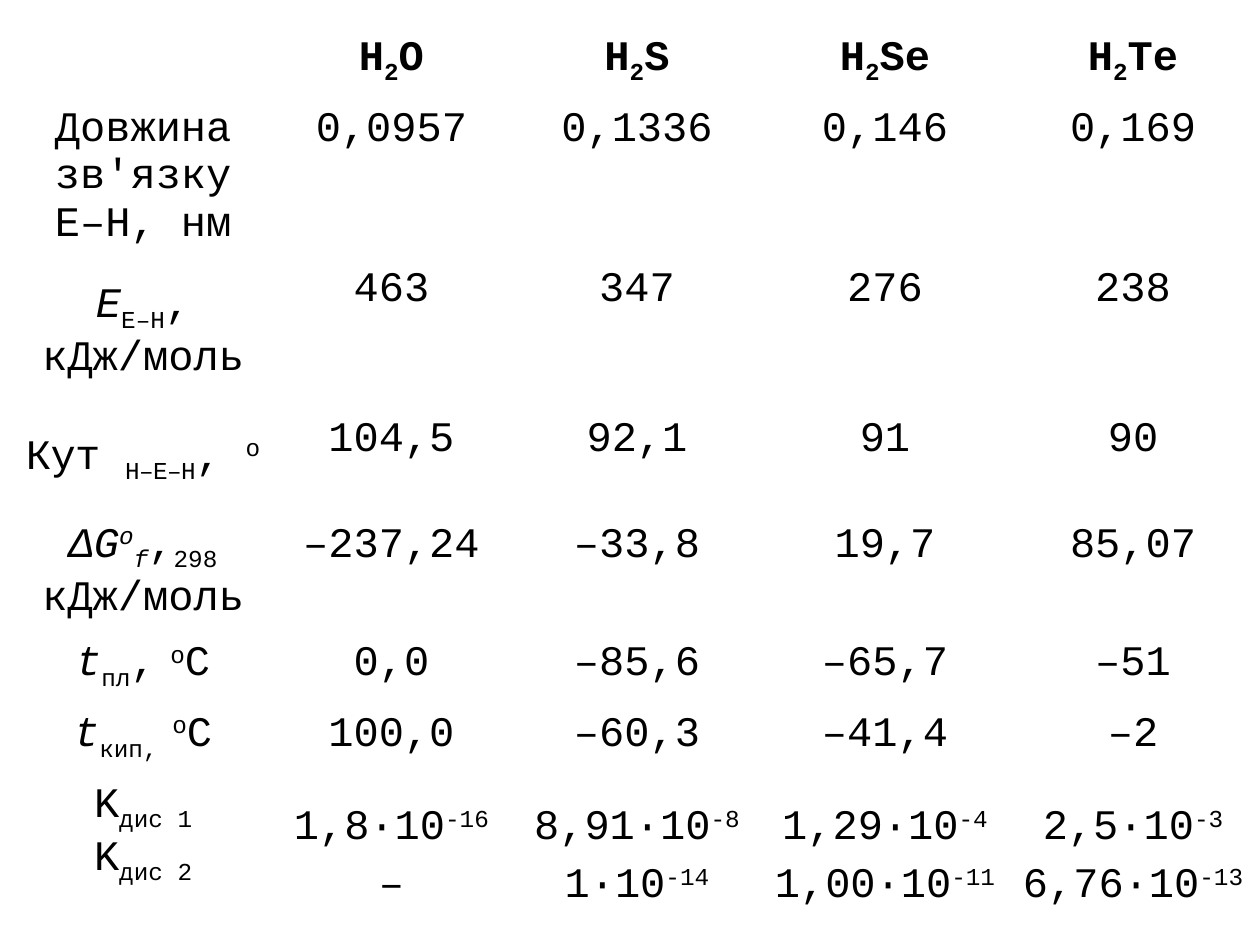
from typing import NamedTuple

from lxml import etree
from pptx import Presentation
from pptx.dml.color import RGBColor
from pptx.enum.text import MSO_ANCHOR, PP_ALIGN
from pptx.oxml.ns import qn
from pptx.util import Cm, Pt

TOP, MIDDLE = MSO_ANCHOR.TOP, MSO_ANCHOR.MIDDLE
CENTER = PP_ALIGN.CENTER
COLORS = {"text": "000000", "border": "FFFFFF"}
FONT_NAME, FONT_SIZE = "Courier New", Pt(24)
SUBSCRIPT, SUPERSCRIPT = -25, 30
COLUMN_WIDTHS = [5.11, 4.9, 5.0, 5.0, 5.0]


class Piece(NamedTuple):
    text: str
    baseline: int = 0
    italic: bool = False
    spacing: int = 0


class TableRow(NamedTuple):
    height: float
    label: list  # paragraphs, each a list of pieces
    values: list  # one list of paragraphs per compound
    label_anchor: MSO_ANCHOR = MIDDLE
    value_anchor: MSO_ANCHOR = TOP
    bold: bool = False


def sub(text: str, italic: bool = False, spacing: int = 0) -> Piece:
    return Piece(text, SUBSCRIPT, italic, spacing)


def sup(text: str, italic: bool = False, spacing: int = 0) -> Piece:
    return Piece(text, SUPERSCRIPT, italic, spacing)


def plain(*texts: str) -> list:
    return [[[Piece(text)]] for text in texts]


def hydride(element: str) -> list:
    return [[Piece("H"), sub("2"), Piece(element)]]


def power(factor: str, exponent: str) -> list:
    return [Piece(f"{factor}·10"), sup(exponent)]


ROWS = [
    TableRow(1.27, [], [hydride(name) for name in ("O", "S", "Se", "Te")], bold=True),
    TableRow(2.13, [[Piece("Довжина зв'язку Е‒Н, нм")]],
             plain("0,0957", "0,1336", "0,146", "0,169")),
    TableRow(3.02, [[Piece("E", italic=True), sub("Е‒Н"), Piece(", кДж/моль")]],
             plain("463", "347", "276", "238")),
    TableRow(2.13, [[Piece("Кут ", spacing=-30), sub("Н‒Е‒Н", spacing=-30),
                     Piece(", ", spacing=-30), sup("о", spacing=-30)]],
             plain("104,5", "92,1", "91", "90")),
    TableRow(2.13, [[Piece("ΔG", italic=True), sup("о", True), sub("f", True),
                     Piece(","), sub("298"), Piece(" кДж/моль")]],
             plain("‒237,24", "‒33,8", "19,7", "85,07")),
    TableRow(1.27, [[Piece("t", italic=True), sub("пл"), Piece(","), sup(" о"), Piece("С")]],
             plain("0,0", "‒85,6", "‒65,7", "‒51")),
    TableRow(1.27, [[Piece("t", italic=True), sub("кип, "), sup("о"), Piece("С")]],
             plain("100,0", "‒60,3", "‒41,4", "‒2")),
    TableRow(3.4, [[Piece("K"), sub("дис 1")], [Piece("K"), sub("дис 2")]],
             [[power("1,8", "-16"), [Piece("‒")]],
              [power("8,91", "-8"), power("1", "-14")],
              [power("1,29", "-4"), power("1,00", "-11")],
              [power("2,5", "-3"), power("6,76", "-13")]],
             label_anchor=TOP, value_anchor=MIDDLE),
]


def add_piece(paragraph, piece: Piece, bold: bool) -> None:
    run = paragraph.add_run()
    run.text = piece.text
    font = run.font
    font.name, font.size = FONT_NAME, FONT_SIZE
    font.bold, font.italic = bold, piece.italic
    font.color.rgb = RGBColor.from_string(COLORS["text"])
    # Baseline shift and letter spacing exist only as XML attributes
    properties = run._r.get_or_add_rPr()
    if piece.baseline:
        properties.set("baseline", str(piece.baseline * 1000))
    if piece.spacing:
        properties.set("spc", str(piece.spacing))


def set_borders(cell, bottom_width: int) -> None:
    properties = cell._tc.get_or_add_tcPr()
    for side, width in (("L", 1), ("R", 1), ("T", 1), ("B", bottom_width)):
        line = etree.SubElement(properties, qn(f"a:ln{side}"), w=str(Pt(width)))
        fill = etree.SubElement(line, qn("a:solidFill"))
        etree.SubElement(fill, qn("a:srgbClr"), val=COLORS["border"])


def fill_cell(cell, paragraphs: list, anchor: MSO_ANCHOR, bold: bool,
              space_before: int) -> None:
    set_borders(cell, 3 if bold else 1)
    cell.fill.background()
    cell.vertical_anchor = anchor
    cell.margin_left = cell.margin_right = Cm(0.18)
    cell.margin_top = cell.margin_bottom = Cm(0.18)
    frame = cell.text_frame
    for index, pieces in enumerate(paragraphs):
        paragraph = frame.add_paragraph() if index else frame.paragraphs[0]
        paragraph.alignment = CENTER
        if index:
            paragraph.space_before = Pt(space_before)
        for piece in pieces:
            add_piece(paragraph, piece, bold)


def add_property_table(slide) -> None:
    height = sum(row.height for row in ROWS)
    table = slide.shapes.add_table(
        len(ROWS), len(COLUMN_WIDTHS), Cm(0.33), Cm(0.53),
        Cm(sum(COLUMN_WIDTHS)), Cm(height)).table
    table.first_row = table.horz_banding = False
    for column, width in zip(table.columns, COLUMN_WIDTHS):
        column.width = Cm(width)
    for row_index, row in enumerate(ROWS):
        table.rows[row_index].height = Cm(row.height)
        fill_cell(table.cell(row_index, 0), row.label, row.label_anchor, row.bold, 0)
        for column_index, value in enumerate(row.values, start=1):
            fill_cell(table.cell(row_index, column_index), value,
                      row.value_anchor, row.bold, 6)


def main() -> None:
    presentation = Presentation()
    presentation.slide_width, presentation.slide_height = Cm(25.4), Cm(19.05)
    slide = presentation.slides.add_slide(presentation.slide_layouts[6])
    # Properties of the hydrogen compounds
    add_property_table(slide)
    presentation.save("out.pptx")


if __name__ == "__main__":
    main()
